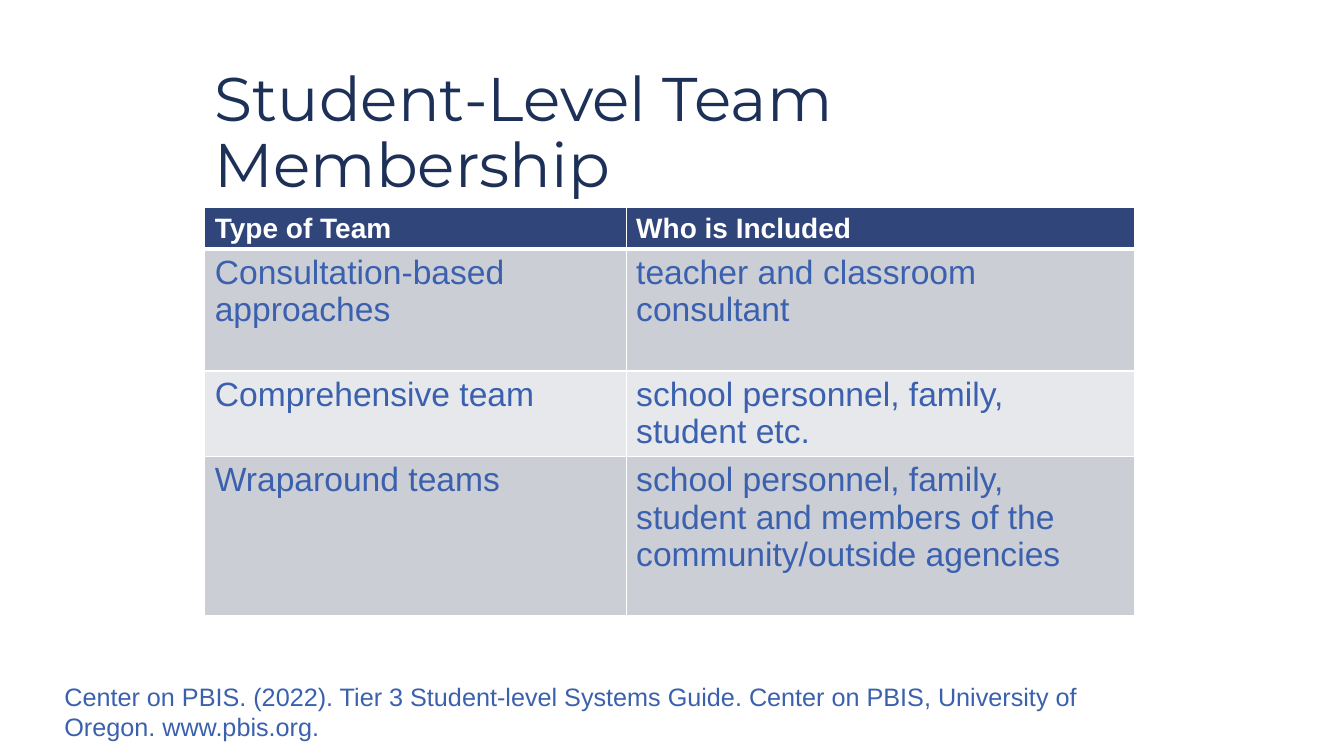
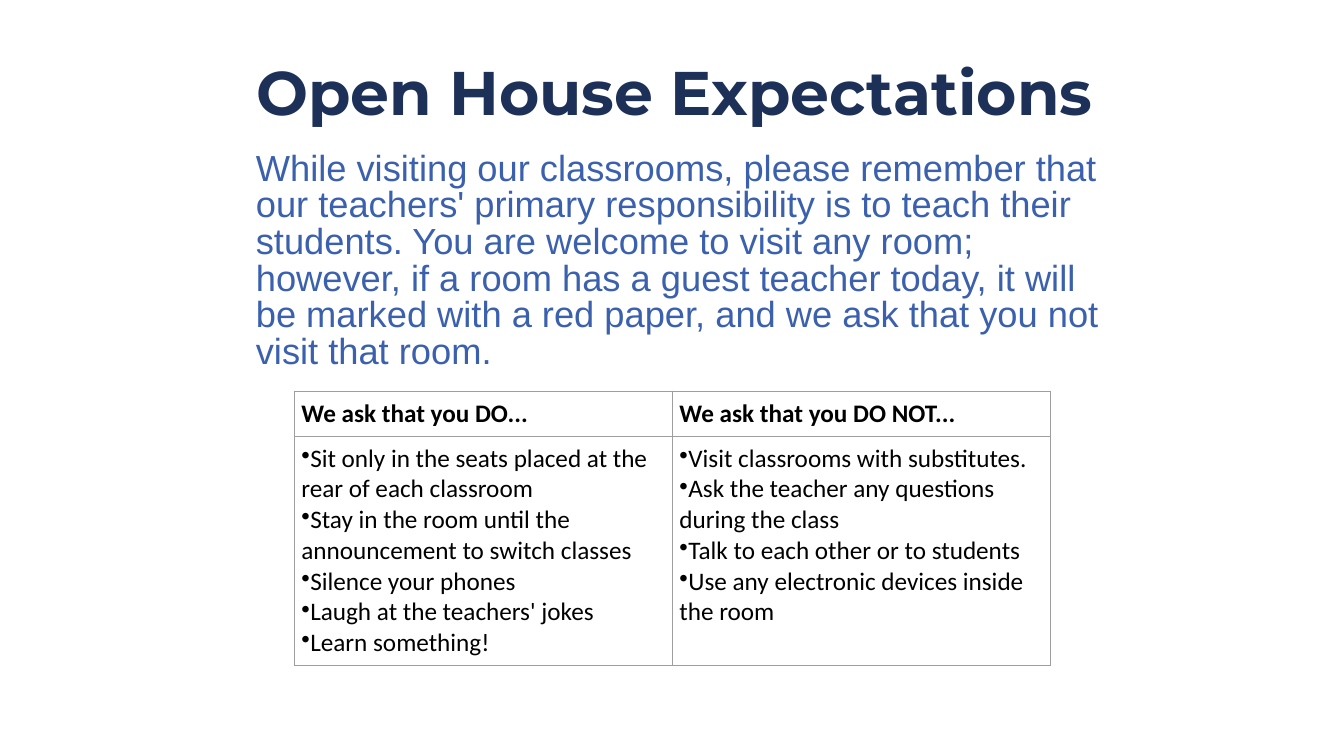
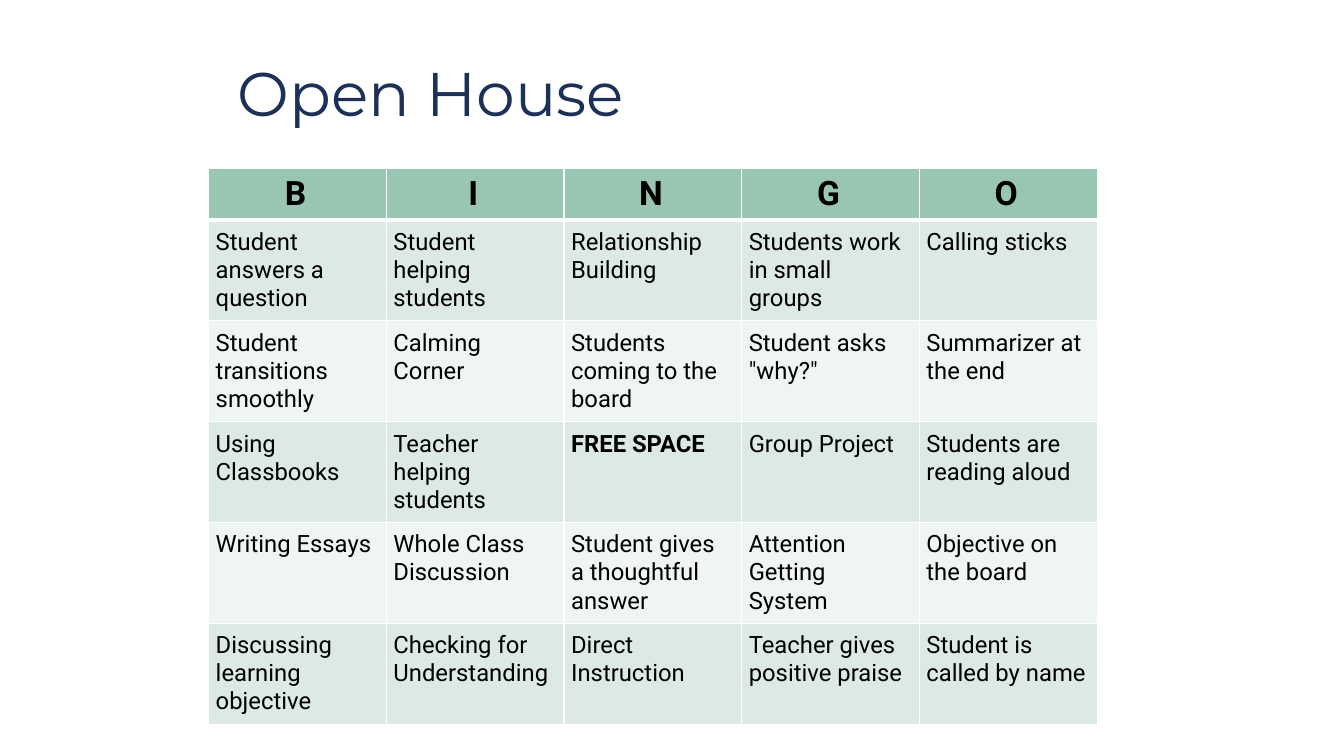
from lxml import etree
from pptx import Presentation
from pptx.dml.color import RGBColor
from pptx.enum.text import MSO_ANCHOR, MSO_AUTO_SIZE, PP_ALIGN
from pptx.oxml.ns import qn
from pptx.util import Inches, Pt

SLIDE_W, SLIDE_H = Inches(13.33), Inches(7.5)
COLORS = {
    "title": "1D3057", "body": "3B61AE", "white": "FFFFFF", "black": "000000",
    "navy": "304579", "grey": "CCCED6", "pale_grey": "E7E8EB", "rule": "9E9E9E",
    "green": "99C5B3", "mint": "DDEAE4", "pale_mint": "EFF5F2",
}
TITLE_FONT = {"name": "Montserrat", "size": Pt(44), "color": "title"}
BODY_FONT = {"name": "Arial", "color": "body"}

# Table looks: fonts, fills by row, borders and cell margins (inches)
TEAM_LOOK = {
    "head": {"name": "Arial", "size": Pt(20), "bold": True, "color": "white"},
    "body": {**BODY_FONT, "size": Pt(24), "bold": False},
    "head_fill": "navy", "bands": ("grey", "pale_grey"),
    "border": "white", "line": 1, "head_line": 3,
    "head_margins": (0.1, 0.05, 0.1, 0.05), "margins": (0.1, 0.05, 0.1, 0.05),
}
RULES_LOOK = {
    "head": {"name": "Calibri", "size": Pt(18), "bold": True, "color": "black"},
    "body": {"name": "Calibri", "size": Pt(18), "bold": False, "color": "black"},
    "head_fill": None, "bands": (None,), "bullets": True,
    "border": "rule", "line": 0.75, "head_line": 0.75,
    "head_margins": (0.07,) * 4, "margins": (0.07,) * 4,
}
BINGO_LOOK = {
    "head": {"name": "Roboto", "size": Pt(24), "bold": True, "color": "black"},
    "body": {"name": "Roboto", "size": Pt(17), "bold": False, "color": "black"},
    "head_fill": "green", "bands": ("mint", "pale_mint"),
    "head_align": PP_ALIGN.CENTER, "strong": "FREE SPACE",
    "border": "white", "line": 1, "head_line": 3,
    "head_margins": (0.07, 0.06, 0.11, 0.06), "margins": (0.07, 0.08, 0.11, 0.08),
}

TEAMS = [
    ("Type of Team", "Who is Included"),
    ("Consultation-based\napproaches", "teacher and classroom\nconsultant"),
    ("Comprehensive team", "school personnel, family,\nstudent etc."),
    ("Wraparound teams", "school personnel, family,\nstudent and members of the\n"
                         "community/outside agencies"),
]
CITATION = ("Center on PBIS. (2022). Tier 3 Student-level Systems Guide. "
            "Center on PBIS, University of Oregon. www.pbis.org.")
WELCOME = ("While visiting our classrooms, please remember that our teachers' primary "
           "responsibility is to teach their students. You are welcome to visit any room; "
           "however, if a room has a guest teacher today, it will be marked with a red "
           "paper, and we ask that you not visit that room.")
VISITOR_RULES = [
    ("We ask that you DO...", "We ask that you DO NOT..."),
    ("Sit only in the seats placed at the rear of each classroom\n"
     "Stay in the room until the announcement to switch classes\n"
     "Silence your phones\nLaugh at the teachers' jokes\nLearn something!",
     "Visit classrooms with substitutes.\n"
     "Ask the teacher any questions during the class\n"
     "Talk to each other or to students\n"
     "Use any electronic devices inside the room"),
]
BINGO = [
    tuple("BINGO"),
    ("Student answers a question", "Student helping students", "Relationship Building",
     "Students work in small groups", "Calling sticks"),
    ("Student transitions smoothly", "Calming Corner", "Students coming to the board",
     'Student asks "why?"', "Summarizer at the end"),
    ("Using Classbooks", "Teacher helping students", "FREE SPACE", "Group Project",
     "Students are reading aloud"),
    ("Writing Essays", "Whole Class Discussion", "Student gives a thoughtful answer",
     "Attention Getting System", "Objective on the board"),
    ("Discussing learning objective", "Checking for Understanding", "Direct Instruction",
     "Teacher gives positive praise", "Student is called by name"),
]


def across(percent):
    return int(SLIDE_W * percent / 100)


def down(percent):
    return int(SLIDE_H * percent / 100)


def to_emu(box):
    """Turn left, top, width, height in percent of the slide into lengths."""
    left, top, width, height = box
    return across(left), down(top), across(width), down(height)


def set_font(font, look):
    for key, value in look.items():
        if key == "color":
            font.color.rgb = RGBColor.from_string(COLORS[value])
        else:
            setattr(font, key, value)


def fill_text(frame, text, look, bullets=False, **layout):
    for i, line in enumerate(text.split("\n")):
        paragraph = frame.paragraphs[0] if i == 0 else frame.add_paragraph()
        for key, value in layout.items():
            setattr(paragraph, key, value)
        if bullets:
            props = paragraph._p.get_or_add_pPr()
            props.set("marL", "0")
            props.set("indent", str(-Inches(0.12)))
            etree.SubElement(props, qn("a:buChar")).set("char", "•")
        run = paragraph.add_run()
        run.text = line
        set_font(run.font, look)


def add_title_slide(deck, title, box, **font):
    slide = deck.slides.add_slide(deck.slide_layouts[5])
    holder = slide.shapes.title
    holder.left, holder.top, holder.width, holder.height = to_emu(box)
    frame = holder.text_frame
    frame.auto_size = MSO_AUTO_SIZE.NONE
    frame.vertical_anchor = MSO_ANCHOR.MIDDLE
    fill_text(frame, title, {**TITLE_FONT, **font},
              alignment=PP_ALIGN.LEFT, line_spacing=0.9)
    return slide


def add_note(slide, text, box, size, **layout):
    frame = slide.shapes.add_textbox(*to_emu(box)).text_frame
    frame.word_wrap = True
    fill_text(frame, text, {**BODY_FONT, "size": Pt(size)}, **layout)


def set_borders(cell, color, widths):
    props = cell._tc.get_or_add_tcPr()
    for i, (side, width) in enumerate(widths.items()):
        line = etree.Element(qn("a:ln" + side), w=str(Pt(width)))
        fill = etree.SubElement(line, qn("a:solidFill"))
        etree.SubElement(fill, qn("a:srgbClr"), val=COLORS[color])
        props.insert(i, line)


def style_cell(cell, text, row, look):
    part = "head" if row == 0 else "body"
    margins = look["head_margins" if row == 0 else "margins"]
    for side, margin in zip(("left", "top", "right", "bottom"), margins):
        setattr(cell, "margin_" + side, Inches(margin))
    font = dict(look[part])
    if text == look.get("strong"):
        font["bold"] = True
    align = look.get("head_align") if row == 0 else None
    fill_text(cell.text_frame, text, font, bullets=row > 0 and look.get("bullets"),
              alignment=align or PP_ALIGN.LEFT)
    bands = look["bands"]
    fill = look["head_fill"] if row == 0 else bands[(row - 1) % len(bands)]
    if fill:
        cell.fill.solid()
        cell.fill.fore_color.rgb = RGBColor.from_string(COLORS[fill])
    else:
        cell.fill.background()
    # The rule under the header is shared by the first two rows
    set_borders(cell, look["border"], {
        "L": look["line"], "R": look["line"],
        "T": look["head_line"] if row == 1 else look["line"],
        "B": look["head_line"] if row == 0 else look["line"],
    })


def add_grid(slide, rows, corner, columns, heights, look):
    """Columns and heights are percent of the slide's width and height."""
    box = to_emu((*corner, sum(columns), sum(heights)))
    table = slide.shapes.add_table(len(rows), len(columns), *box).table
    table.horz_banding = table.first_row = False
    for column, width in zip(table.columns, columns):
        column.width = across(width)
    for r, (texts, height) in enumerate(zip(rows, heights)):
        table.rows[r].height = down(height)
        for c, text in enumerate(texts):
            style_cell(table.cell(r, c), text, r, look)


def build_team_slide(deck):
    slide = add_title_slide(deck, "Student-Level Team Membership",
                            (15.23, 8.13, 69.24, 19.33))
    add_grid(slide, TEAMS, (15.23, 27.47), (31.36, 37.81),
             (5.4, 16.13, 11.27, 21.13), TEAM_LOOK)
    add_note(slide, CITATION, (4.05, 89.47, 78.17, 9.47), 18)


def build_expectations_slide(deck):
    slide = add_title_slide(deck, "Open House Expectations",
                            (18.3, 2.93, 69.62, 19.33), bold=True)
    add_note(slide, WELCOME, (18.3, 19.47, 66.17, 30), 25.9, line_spacing=0.84)
    add_grid(slide, VISITOR_RULES, (21.9, 51.73), (28.13,) * 2, (5.95, 30.3), RULES_LOOK)


def build_bingo_slide(deck):
    slide = add_title_slide(deck, "Open House", (16.95, 3.07, 66.17, 19.33))
    add_grid(slide, BINGO, (15.53, 22.27), (13.22,) * 5, (6.67,) + (13.35,) * 5, BINGO_LOOK)


def main():
    deck = Presentation()
    deck.slide_width, deck.slide_height = SLIDE_W, SLIDE_H
    for build in (build_team_slide, build_expectations_slide, build_bingo_slide):
        build(deck)
    deck.save("out.pptx")


if __name__ == "__main__":
    main()
